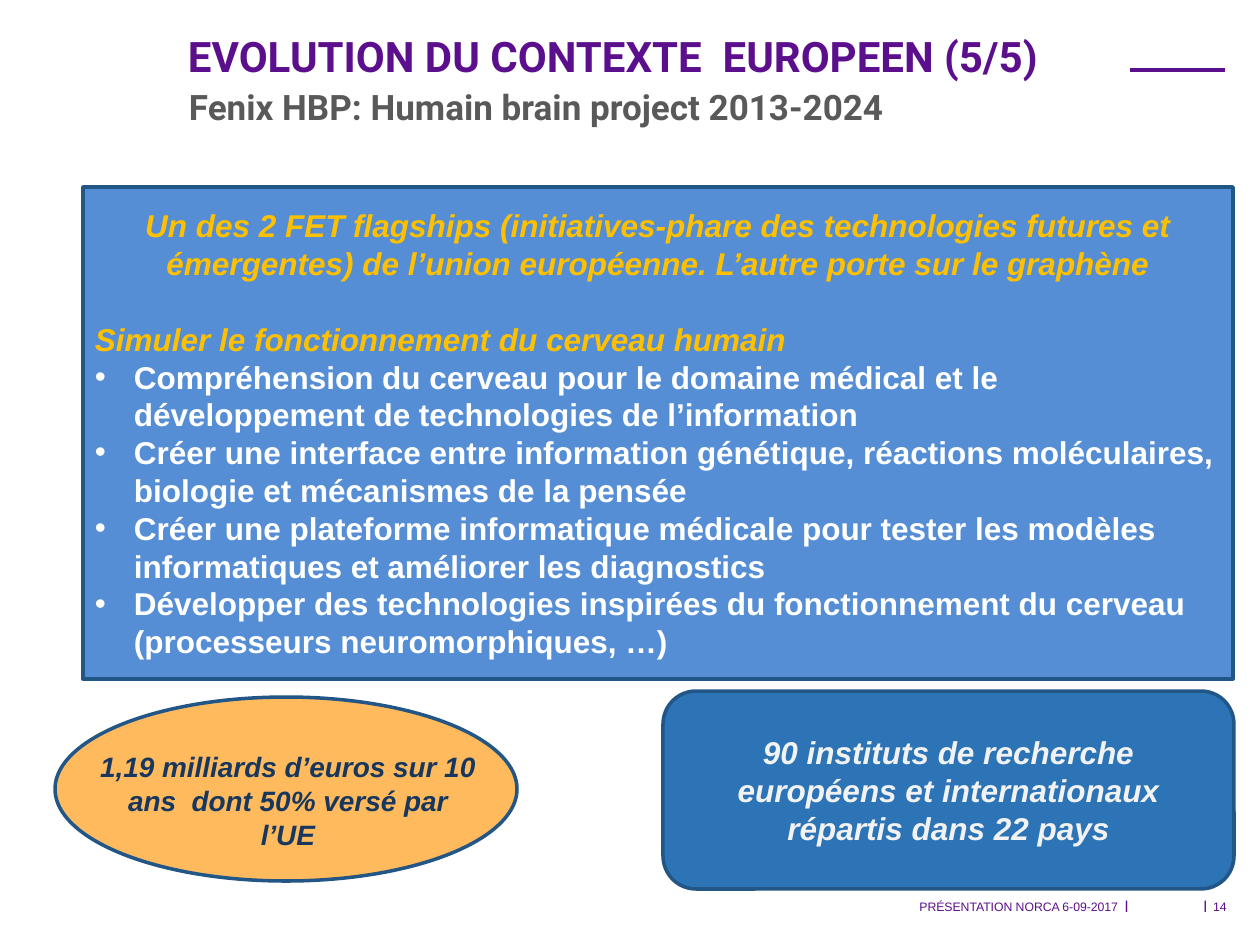
from dataclasses import dataclass

from lxml import etree
from pptx import Presentation
from pptx.dml.color import RGBColor
from pptx.enum.shapes import MSO_CONNECTOR as Link, MSO_SHAPE as Kind
from pptx.enum.text import MSO_ANCHOR as Anchor, PP_ALIGN as Align
from pptx.oxml.ns import qn
from pptx.util import Emu, Pt

PURPLE, EDGE, GOLD, WHITE = "5C0F8C", "215686", "FFC000", "FFFFFF"
LEFT, MID, RIGHT = Align.LEFT, Align.CENTER, Align.RIGHT


@dataclass
class Line:
    text: str
    size: float
    color: str
    align: Align = LEFT
    bold: bool = False
    slant: bool = False
    font: str = "Arial"
    dot: bool = False
    gap: float = 0


@dataclass
class Box:
    x: int
    y: int
    w: int
    h: int
    lines: tuple[Line, ...] = ()
    pad: tuple[int, int, int, int] = (13, 6, 13, 6)
    anchor: Anchor = Anchor.TOP
    kind: Kind | None = None
    fill: str = ""
    edge: str = EDGE


def px(n: int) -> Emu:
    return Emu(round(n * 914400 / 126))


def tint(code: str) -> RGBColor:
    return RGBColor.from_string(code)


def add_dot(para) -> None:
    props = para._p.get_or_add_pPr()
    props.set("marL", str(px(39)))
    props.set("indent", str(-px(39)))
    etree.SubElement(props, qn("a:buFont")).set("typeface", "Arial")
    etree.SubElement(props, qn("a:buChar")).set("char", "•")


def write(frame, box: Box) -> None:
    frame.word_wrap = True
    frame.vertical_anchor = box.anchor
    (frame.margin_left, frame.margin_top,
     frame.margin_right, frame.margin_bottom) = map(px, box.pad)
    for i, line in enumerate(box.lines):
        para = frame.add_paragraph() if i else frame.paragraphs[0]
        para.text = line.text
        para.alignment = line.align
        if line.gap:
            para.space_before = Pt(line.gap)
        if line.dot:
            add_dot(para)
        for run in para.runs:
            font = run.font
            font.name, font.size = line.font, Pt(line.size)
            font.bold, font.italic = line.bold, line.slant
            font.color.rgb = tint(line.color)


def draw(slide, box: Box) -> None:
    area = [px(n) for n in (box.x, box.y, box.w, box.h)]
    if box.kind is None:
        shape = slide.shapes.add_textbox(*area)
    else:
        shape = slide.shapes.add_shape(box.kind, *area)
        shape.shadow.inherit = False
        shape.fill.solid()
        shape.fill.fore_color.rgb = tint(box.fill)
        if box.edge:
            shape.line.color.rgb = tint(box.edge)
            shape.line.width = Pt(2)
        else:
            shape.line.fill.background()
    if box.lines:
        write(shape.text_frame, box)


def rule(slide, x: int, y: int, end: int) -> None:
    line = slide.shapes.add_connector(Link.STRAIGHT, px(x), px(y), px(end), px(y))
    line.line.color.rgb = tint(PURPLE)
    line.line.width = Pt(2)
    etree.SubElement(line._element.spPr, qn("a:effectLst"))


GOALS = (
    "Compréhension du cerveau pour le domaine médical et le développement "
    "de technologies de l’information",
    "Créer une interface entre information génétique, réactions moléculaires, "
    "biologie et mécanismes de la pensée",
    "Créer une plateforme informatique médicale pour tester les modèles "
    "informatiques et améliorer les diagnostics",
    "Développer des technologies inspirées du fonctionnement du cerveau "
    "(processeurs neuromorphiques, …)",
)
PANEL = (
    Line("Un des 2 FET flagships (initiatives-phare des technologies futures et "
         "émergentes) de l’union européenne. L’autre porte sur le graphène",
         18, GOLD, MID, True, True),
    Line("Simuler le fonctionnement du cerveau humain",
         18, GOLD, LEFT, True, True, gap=21.8),
    *(Line(goal, 18, WHITE, bold=True, dot=True) for goal in GOALS),
)
BARS = tuple(
    Box(x, 891, 29, 32, (Line("l", 9, PURPLE, MID),), (0, 6, 0, 6))
    for x in (1112, 1191)
)
BOXES = (
    *BARS,
    Box(175, 25, 955, 63, (Line("EVOLUTION DU CONTEXTE  EUROPEEN (5/5)",
                                24, PURPLE, bold=True, font="Roboto"),),
        (13, 6, 8, 6), kind=Kind.RECTANGLE, fill=WHITE, edge=""),
    Box(176, 79, 755, 55, (Line("Fenix HBP: Humain brain project 2013-2024",
                                20, "595959", bold=True, font="Roboto"),)),
    Box(1213, 893, 20, 26, (Line("14", 7, PURPLE),), (0, 6, 0, 6)),
    Box(137, 893, 981, 26, (Line("PRÉSENTATION NORCA 6-09-2017", 7, PURPLE, RIGHT),),
        (13, 6, 0, 6)),
    Box(663, 691, 571, 198,
        (Line("90 instituts de recherche européens et internationaux "
              "répartis dans 22 pays", 18, "F2F2F2", MID, True, True),),
        anchor=Anchor.MIDDLE, kind=Kind.ROUNDED_RECTANGLE, fill="2C74B5"),
    Box(83, 187, 1150, 492, PANEL, (12, 19, 12, 6),
        kind=Kind.RECTANGLE, fill="558ED5"),
    Box(55, 697, 462, 184, kind=Kind.OVAL, fill="FFBA5D"),
    Box(85, 744, 406, 115,
        (Line("1,19 milliards d’euros sur 10 ans  dont 50% versé par l’UE",
              16, "17375E", MID, True, True),)),
)


def main() -> None:
    deck = Presentation()
    deck.slide_width, deck.slide_height = px(1260), px(945)
    slide = deck.slides.add_slide(deck.slide_layouts[6])
    rule(slide, 1225, 70, 203)
    for box in BOXES:
        draw(slide, box)
    deck.save("out.pptx")


if __name__ == "__main__":
    main()
